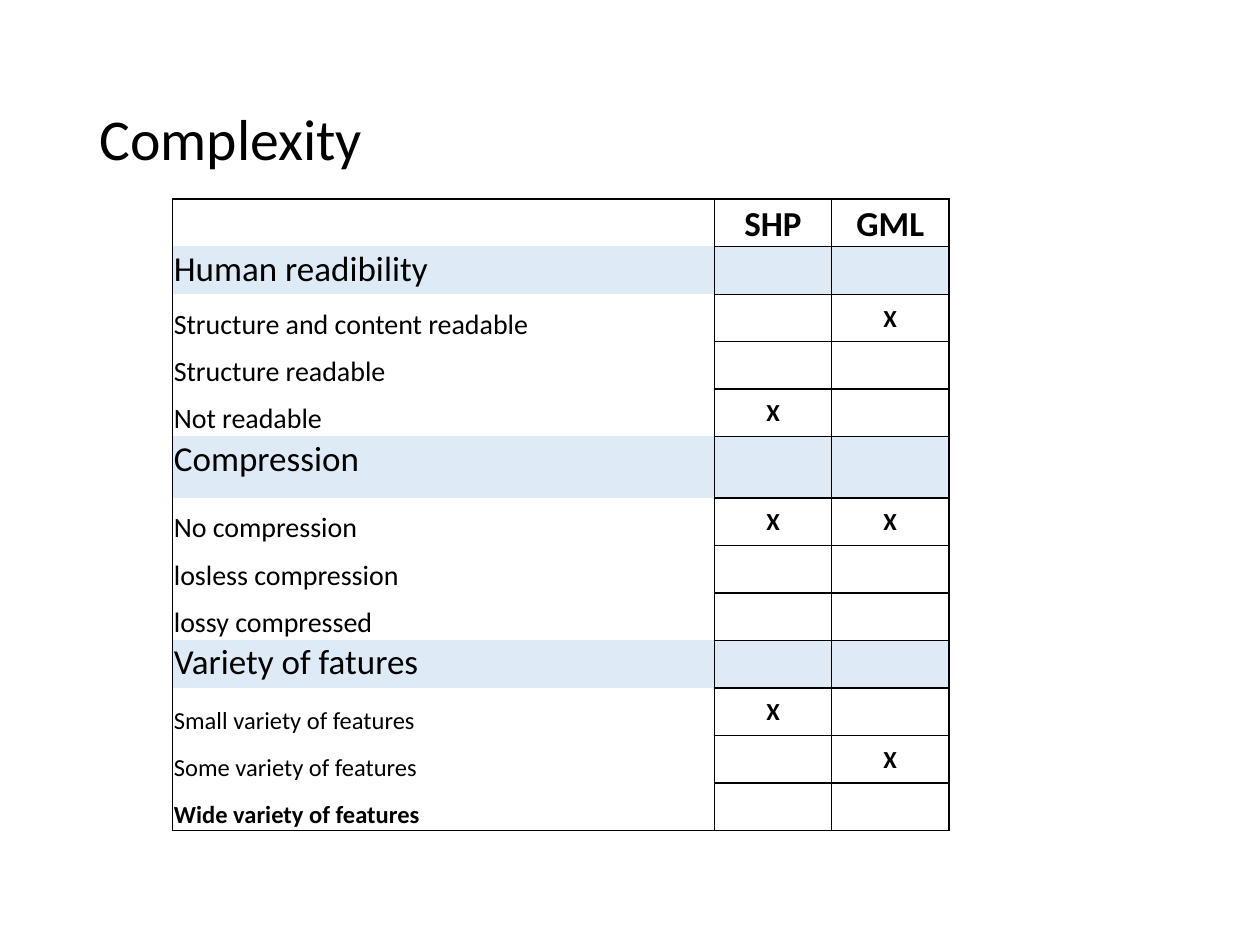
"""Build a slide with a table that compares the complexity of SHP and GML."""
from dataclasses import dataclass

from lxml import etree
from pptx import Presentation
from pptx import util as u
from pptx.dml.color import RGBColor
from pptx.enum import text
from pptx.oxml import ns

TITLE = "Complexity"
HEADS = ["SHP", "GML"]
GROUPS = [
    ("Human readibility", 0.38, 16, [
        ("Structure and content readable", "", "X"),
        ("Structure readable", "", ""),
        ("Not readable", "X", "")]),
    ("Compression", 0.49, 16, [
        ("No compression", "X", "X"),
        ("losless compression", "", ""),
        ("lossy compressed", "", "")]),
    ("Variety of fatures", 0.38, 14, [
        ("Small variety of features", "X", ""),
        ("Some variety of features", "", "X"),
        ("Wide variety of features", "", "")]),
]
STRONG = "Wide variety of features"
COLS = [4.3] + [0.93] * 4
ROW = 0.376
USED = 1 + len(HEADS)


@dataclass(frozen=True)
class Theme:
    font: str = "Calibri"
    ink: str = "000000"
    paper: str = "FFFFFF"
    band: str = "DEEBF7"
    title: int = 33
    head: int = 20
    mark: int = 14


THEME = Theme()
TOP, MID, BASE = (text.MSO_ANCHOR.TOP, text.MSO_ANCHOR.MIDDLE,
                  text.MSO_ANCHOR.BOTTOM)


def style(para, size, bold=False, align=text.PP_ALIGN.LEFT):
    para.alignment = align
    font = para.font
    font.name, font.size, font.bold = THEME.font, u.Pt(size), bold
    font.color.rgb = RGBColor.from_string(THEME.ink)


def edge(cell, sides):
    props = cell._tc.get_or_add_tcPr()
    for spot, side in enumerate("LRTB"):
        line = etree.Element(ns.qn(f"a:ln{side}"), w=str(u.Pt(1)))
        if side in sides:
            fill = etree.SubElement(line, ns.qn("a:solidFill"))
            etree.SubElement(fill, ns.qn("a:srgbClr"), val=THEME.ink)
        else:
            etree.SubElement(line, ns.qn("a:noFill"))
        props.insert(spot, line)


def sides(row, col, last):
    if col >= USED:
        return "L" if col == USED else ""
    if col:
        return "LRTB"
    return "LR" + ("T" if row == 0 else "") + ("B" if row == last else "")


def plan():
    """Return height, fill, label style, mark style and words of each row."""
    rows = [(ROW, THEME.paper, (THEME.head, False, BASE),
             (THEME.head, BASE), ["", *HEADS])]
    for name, high, size, items in GROUPS:
        rows.append((high, THEME.band, (THEME.head, False, TOP),
                     (THEME.mark, MID), [name, "", ""]))
        rows += [(ROW, THEME.paper, (size, item[0] == STRONG, BASE),
                  (THEME.mark, MID), item) for item in items]
    return rows


def fill_cell(cell, words, col, label, mark):
    cell.margin_left = cell.margin_right = cell.margin_top = u.Inches(0.01)
    cell.margin_bottom = 0
    cell.text = words
    para = cell.text_frame.paragraphs[0]
    if col:
        style(para, mark[0], True, text.PP_ALIGN.CENTER)
        cell.vertical_anchor = mark[1]
    else:
        style(para, *label[:2])
        cell.vertical_anchor = label[2]


def add_grid(slide):
    rows = plan()
    size = [u.Inches(n) for n in (1.37, 1.58, sum(COLS), sum(r[0] for r in rows))]
    table = slide.shapes.add_table(len(rows), len(COLS), *size).table
    table.first_row = table.horz_banding = False
    for col, wide in zip(table.columns, COLS):
        col.width = u.Inches(wide)
    for r, (high, tint, label, mark, words) in enumerate(rows):
        table.rows[r].height = u.Inches(high)
        for c in range(len(COLS)):
            cell = table.cell(r, c)
            fill_cell(cell, words[c] if c < USED else "", c, label, mark)
            if c < USED:
                cell.fill.solid()
                cell.fill.fore_color.rgb = RGBColor.from_string(tint)
            else:
                cell.fill.background()
            edge(cell, sides(r, c, len(rows) - 1))


def main():
    deck = Presentation()
    deck.slide_width, deck.slide_height = u.Inches(10), u.Inches(7.5)
    slide = deck.slides.add_slide(deck.slide_layouts[5])
    title = slide.shapes.title
    title.left, title.top, title.width, title.height = (
        u.Inches(n) for n in (0.69, 0.4, 8.62, 1.45))
    title.text_frame.text = TITLE
    title.text_frame.vertical_anchor = MID
    para = title.text_frame.paragraphs[0]
    para.line_spacing = 0.9
    style(para, THEME.title)
    add_grid(slide)
    deck.save("out.pptx")


if __name__ == "__main__":
    main()
